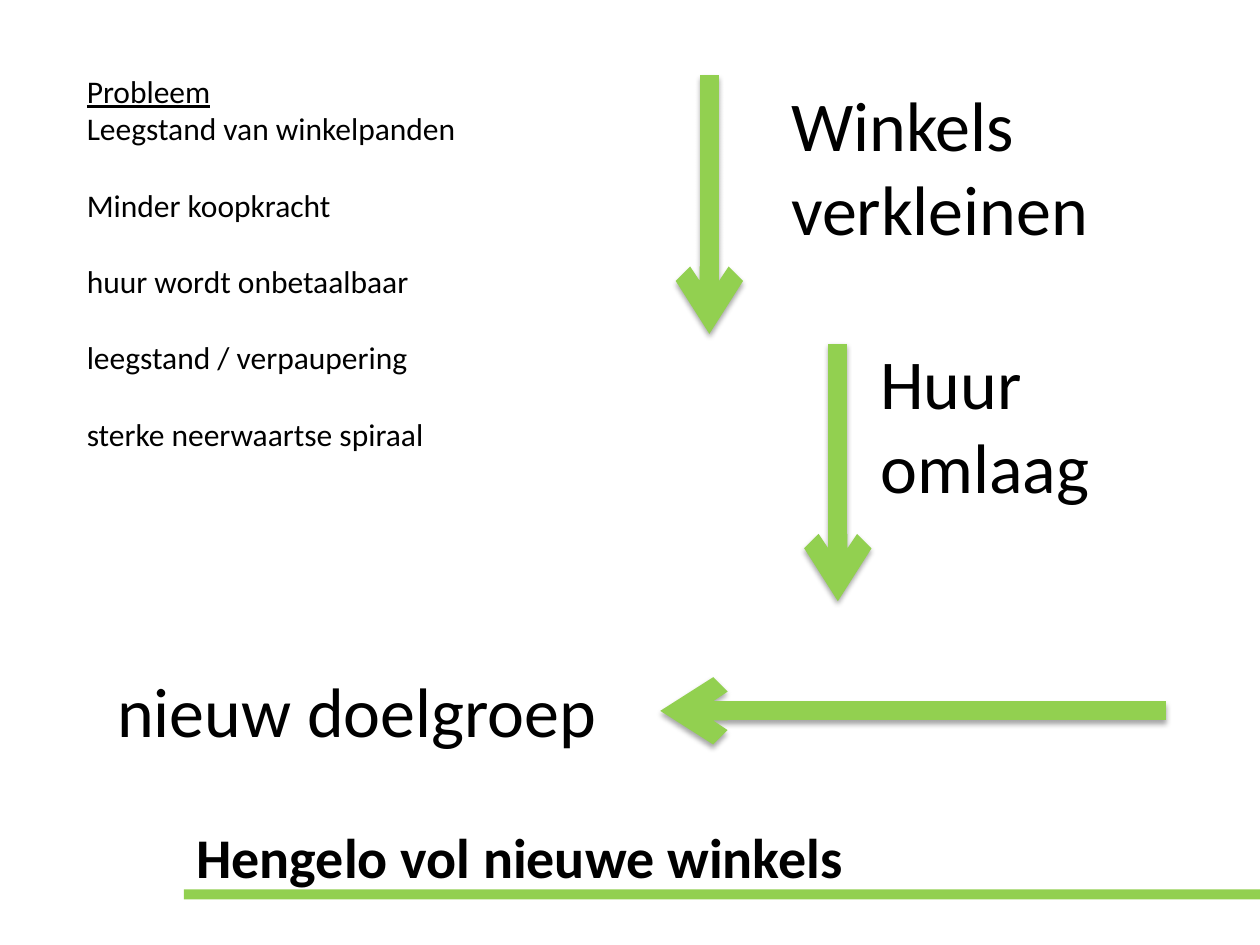
from dataclasses import dataclass

from lxml.etree import SubElement
from pptx import Presentation
from pptx.dml.color import RGBColor
from pptx.enum.shapes import MSO_CONNECTOR, MSO_SHAPE
from pptx.enum.text import MSO_ANCHOR, MSO_AUTO_SIZE
from pptx.oxml.ns import qn
from pptx.slide import Slide
from pptx.util import Cm, Pt


@dataclass(frozen=True)
class Theme:
    font: str = "Calibri"
    text: RGBColor = RGBColor(0, 0, 0)
    accent: RGBColor = RGBColor(0x92, 0xD0, 0x50)
    body_size: int = 18
    banner_size: int = 32
    label_size: int = 40
    paragraph_gap: int = 22
    arrow_width: int = 11


@dataclass(frozen=True)
class Box:
    left: float
    top: float
    width: float
    height: float

    def lengths(self) -> tuple:
        return Cm(self.left), Cm(self.top), Cm(self.width), Cm(self.height)


@dataclass(frozen=True)
class Label:
    text: str
    box: Box


@dataclass(frozen=True)
class Arrow:
    start: tuple[float, float]
    end: tuple[float, float]


THEME = Theme()
SLIDE_WIDTH, SLIDE_HEIGHT = 25.4, 19.05
BANNER_LEFT = 3.71
BANNER_WIDTH = SLIDE_WIDTH - BANNER_LEFT

PROBLEM_HEADING = "Probleem"
PROBLEMS = [
    "Leegstand van winkelpanden",
    "Minder koopkracht",
    "huur wordt onbetaalbaar",
    "leegstand / verpaupering",
    "sterke neerwaartse spiraal",
]
LABELS = [
    Label("Winkels verkleinen", Box(15.7, 1.52, 7.39, 3.68)),
    Label("Huur omlaag", Box(17.5, 6.73, 5.79, 3.68)),
    Label("nieuw doelgroep", Box(2.11, 13.34, 10.21, 1.96)),
]
ARROWS = [
    Arrow((14.3, 1.52), (14.3, 6.73)),
    Arrow((16.89, 6.93), (16.89, 12.12)),
    Arrow((23.5, 14.33), (13.31, 14.33)),
]


def add_text_frame(slide: Slide, box: Box, anchor=MSO_ANCHOR.TOP, grow=True):
    frame = slide.shapes.add_textbox(*box.lengths()).text_frame
    frame.word_wrap = True
    frame.vertical_anchor = anchor
    frame.auto_size = MSO_AUTO_SIZE.SHAPE_TO_FIT_TEXT if grow else MSO_AUTO_SIZE.NONE
    return frame


def write(paragraph, text: str, *, size: int, bold=False, underline=False, before=0) -> None:
    paragraph.space_before = Pt(before)
    run = paragraph.add_run()
    run.text = text
    run.font.name = THEME.font
    run.font.size = Pt(size)
    run.font.bold = bold
    run.font.underline = underline
    run.font.color.rgb = THEME.text


def add_arrow(slide: Slide, arrow: Arrow) -> None:
    points = [Cm(value) for value in (*arrow.start, *arrow.end)]
    connector = slide.shapes.add_connector(MSO_CONNECTOR.STRAIGHT, *points)
    connector.line.color.rgb = THEME.accent
    connector.line.width = Pt(THEME.arrow_width)
    properties = connector._element.spPr
    SubElement(properties.find(qn("a:ln")), qn("a:tailEnd"), type="arrow")

    # Soft shadow straight below the arrow
    effects = SubElement(properties, qn("a:effectLst"))
    shadow = SubElement(effects, qn("a:outerShdw"), blurRad=str(Pt(3.1)),
                        dist=str(Pt(1.8)), dir="5400000", rotWithShape="0")
    color = SubElement(shadow, qn("a:srgbClr"), val=str(THEME.text))
    SubElement(color, qn("a:alpha"), val="35000")


def add_problem_list(slide: Slide) -> None:
    frame = add_text_frame(slide, Box(1.5, 1.32, 10.21, 7.95))
    write(frame.paragraphs[0], PROBLEM_HEADING, size=THEME.body_size, underline=True)
    for index, problem in enumerate(PROBLEMS):
        write(frame.add_paragraph(), problem, size=THEME.body_size,
              before=THEME.paragraph_gap if index else 0)


def add_banner(slide: Slide) -> None:
    frame = add_text_frame(slide, Box(BANNER_LEFT, 15.32, BANNER_WIDTH, 3.89),
                           anchor=MSO_ANCHOR.MIDDLE, grow=False)
    write(frame.paragraphs[0], "Hengelo vol nieuwe winkels",
          size=THEME.banner_size, bold=True)
    bar = slide.shapes.add_shape(MSO_SHAPE.RECTANGLE,
                                 *Box(BANNER_LEFT, 17.93, BANNER_WIDTH, 0.2).lengths())
    bar.shadow.inherit = False
    bar.fill.solid()
    bar.fill.fore_color.rgb = THEME.accent
    bar.line.fill.background()


def main() -> None:
    presentation = Presentation()
    presentation.slide_width = Cm(SLIDE_WIDTH)
    presentation.slide_height = Cm(SLIDE_HEIGHT)
    slide = presentation.slides.add_slide(presentation.slide_layouts[6])

    # Problems and conclusion
    add_problem_list(slide)
    add_banner(slide)

    # Steps towards the conclusion
    for arrow in ARROWS:
        add_arrow(slide, arrow)
    for label in LABELS:
        frame = add_text_frame(slide, label.box)
        write(frame.paragraphs[0], label.text, size=THEME.label_size)

    presentation.save("out.pptx")


if __name__ == "__main__":
    main()
